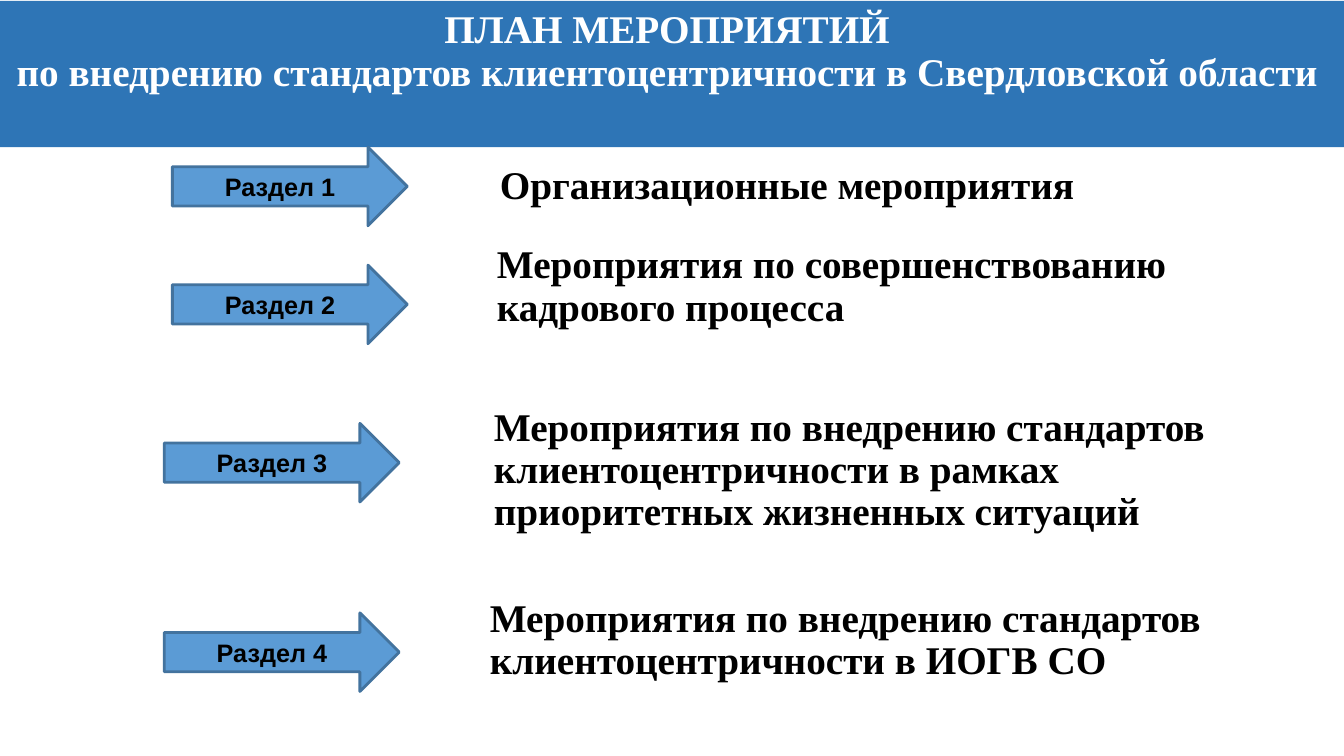
import pptx
import pptx.util
import pptx.dml.color
import pptx.enum.shapes
import pptx.enum.text

Inches = pptx.util.Inches
Pt = pptx.util.Pt
RGBColor = pptx.dml.color.RGBColor
Shape = pptx.enum.shapes.MSO_SHAPE
Align = pptx.enum.text.PP_ALIGN
Anchor = pptx.enum.text.MSO_ANCHOR
Fit = pptx.enum.text.MSO_AUTO_SIZE

NAVY = RGBColor(0x2E, 0x75, 0xB6)
BLUE = RGBColor(0x5B, 0x9B, 0xD5)
EDGE = RGBColor(0x43, 0x73, 0x9E)
BLACK = RGBColor(0, 0, 0)
WHITE = RGBColor(255, 255, 255)
SERIF = "Times New Roman"

TITLE = ("ПЛАН МЕРОПРИЯТИЙ\n"
         "по внедрению стандартов клиентоцентричности в Свердловской области")
PARTS = [
    (1.71, 1.46, "Организационные мероприятия", (4.86, 1.59, 5.89, 0.52)),
    (1.71, 2.63, "Мероприятия по совершенствованию кадрового процесса",
     (4.83, 2.38, 7.7, 0.94)),
    (1.63, 4.2, "Мероприятия по внедрению стандартов клиентоцентричности "
     "в рамках приоритетных жизненных ситуаций", (4.8, 3.99, 7.98, 1.36)),
    (1.63, 6.08, "Мероприятия по внедрению стандартов клиентоцентричности "
     "в ИОГВ СО", (4.76, 5.89, 8.05, 1.5)),
]


def write(frame, text, size, face, color, align, lead=None, gap=0):
    frame.text = text
    for para in frame.paragraphs:
        para.alignment = align
        para.line_spacing = lead
        para.space_before = Pt(gap)
        for run in para.runs:
            run.font.size = Pt(size)
            run.font.name = face
            run.font.bold = True
            run.font.color.rgb = color


def add_block(slide, kind, box, fill):
    shape = slide.shapes.add_shape(kind, *map(Inches, box))
    shape.shadow.inherit = False
    shape.fill.solid()
    shape.fill.fore_color.rgb = fill
    shape.text_frame.word_wrap = True
    shape.text_frame.vertical_anchor = Anchor.MIDDLE
    return shape


def add_title(slide, box):
    band = add_block(slide, Shape.RECTANGLE, box, NAVY)
    band.line.fill.background()
    frame = band.text_frame
    frame.margin_left = frame.margin_top = 0
    frame.margin_right = Inches(0.1)
    frame.margin_bottom = Inches(0.43)
    write(frame, TITLE, 28, SERIF, WHITE, Align.CENTER, 0.9)


def add_arrow(slide, box, label):
    arrow = add_block(slide, Shape.RIGHT_ARROW, box, BLUE)
    arrow.line.color.rgb = EDGE
    arrow.line.width = Pt(2)
    write(arrow.text_frame, label, 18, "Arial", BLACK, Align.CENTER)


def add_topic(slide, box, text, wrap):
    frame = slide.shapes.add_textbox(*map(Inches, box)).text_frame
    frame.word_wrap = wrap
    frame.auto_size = Fit.SHAPE_TO_FIT_TEXT
    write(frame, text, 28, SERIF, BLACK, Align.LEFT, 0.9, 10)


def main():
    deck = pptx.Presentation()
    deck.slide_width = Inches(13.33)
    deck.slide_height = Inches(7.5)
    slide = deck.slides.add_slide(deck.slide_layouts[6])
    add_title(slide, (0, 0.01, 13.33, 1.45))
    for index, (left, top, text, box) in enumerate(PARTS, 1):
        add_arrow(slide, (left, top, 2.33, 0.78), f"Раздел {index}")
        add_topic(slide, box, text, index > 1)
    deck.save("out.pptx")


if __name__ == "__main__":
    main()
